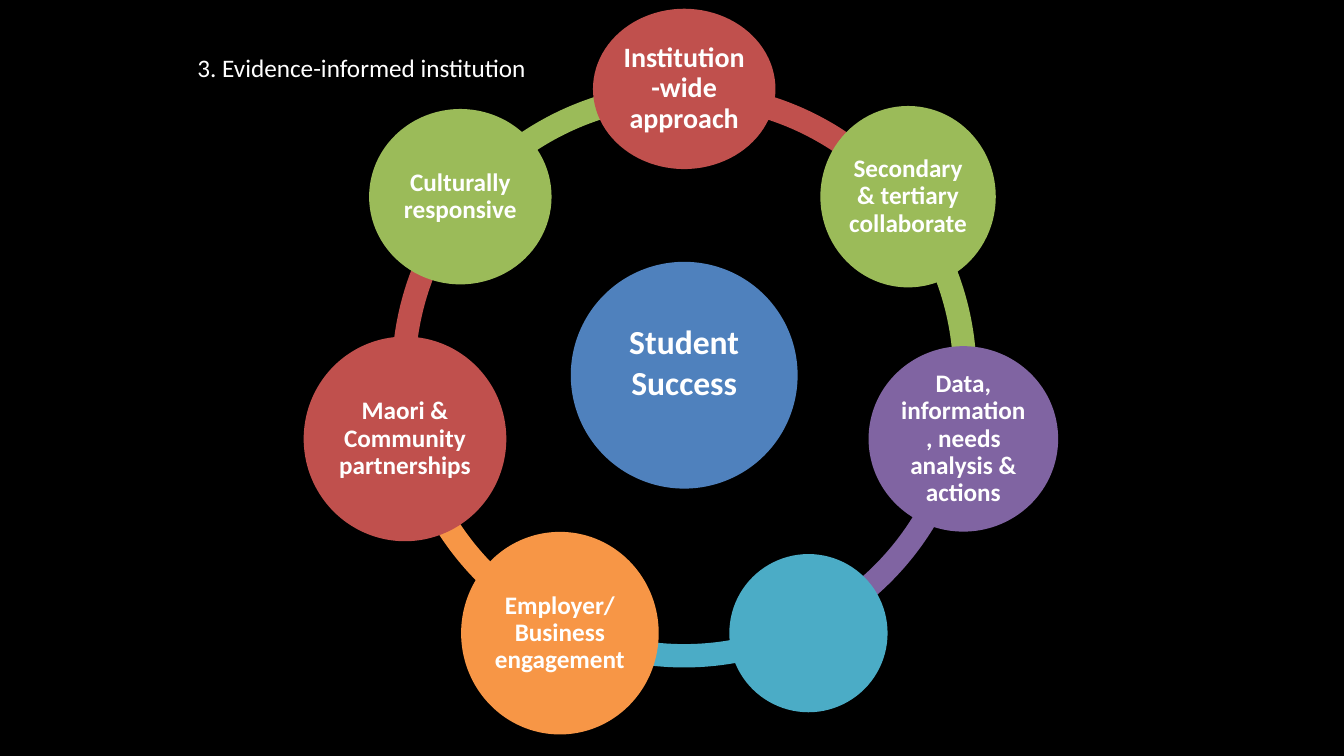
import math

from pptx import Presentation
from pptx import util as u
from pptx.dml.color import RGBColor
from pptx.enum import shapes, text

WIDTH, HEIGHT = u.Inches(13.33), u.Inches(7.5)
COLORS = {
    "black": "000000",
    "white": "FFFFFF",
    "blue": "4F81BD",
    "red": "C0504D",
    "green": "9BBB59",
    "purple": "8064A2",
    "teal": "4BACC6",
    "orange": "F79646",
}
FONT = "Calibri"

# All lengths are percentages of the slide height.
CENTER_X, CENTER_Y = 90.48, 49.63
ORBIT = 37.87
RING_SIZE = 77.33
RING_THICKNESS = 0.04
HUB_SIZE = 30
INSET = 0.4

# label, colour, width, height, font size; clockwise from the top
NODES = [
    ("Institution-wide approach", "red", 24.13, 21.2, 20),
    ("Secondary & tertiary collaborate", "green", 23.2, 24, 18),
    ("Data, information, needs analysis & actions", "purple", 25.07, 24.53, 18),
    ("", "teal", 20.93, 20.93, 18),
    ("Employer/Business engagement", "orange", 26.13, 26.8, 18),
    ("Maori & Community partnerships", "red", 26.8, 27.07, 18),
    ("Culturally responsive", "green", 24.13, 23.2, 18),
]


def pct(share):
    """Length for a percentage of the slide height."""
    return int(HEIGHT * share / 100)


def rgb(name):
    return RGBColor.from_string(COLORS[name])


def add_filled(slide, kind, color, cx, cy, w, h):
    """Borderless preset shape centred on (cx, cy)."""
    sp = slide.shapes.add_shape(
        kind, pct(cx - w / 2), pct(cy - h / 2), pct(w), pct(h))
    sp.shadow.inherit = False
    sp.fill.solid()
    sp.fill.fore_color.rgb = rgb(color)
    sp.line.fill.background()
    return sp


def style_paragraph(p, size, bold=False, align=None, spacing=None):
    p.font.name = FONT
    p.font.size = u.Pt(size)
    p.font.bold = bold
    p.font.color.rgb = rgb("white")
    p.alignment = align
    p.line_spacing = spacing


def add_arc(slide, index, color):
    """Ring segment running clockwise from one node to the next."""
    sp = add_filled(slide, shapes.MSO_SHAPE.BLOCK_ARC, color,
                    CENTER_X, CENTER_Y, RING_SIZE, RING_SIZE)
    # Angle adjustments count 216 to a full turn; 162 is the top.
    step = 216 / len(NODES)
    sp.adjustments[0] = (162 + index * step) % 216
    sp.adjustments[1] = (162 + (index + 1) * step) % 216
    sp.adjustments[2] = RING_THICKNESS


def add_circle(slide, label, color, cx, cy, w, h, size, spacing=0.9, lift=0):
    """Labelled ellipse; lift is extra room kept below the label."""
    sp = add_filled(slide, shapes.MSO_SHAPE.OVAL, color, cx, cy, w, h)
    if not label:
        return
    tf = sp.text_frame
    tf.word_wrap = True
    tf.vertical_anchor = text.MSO_ANCHOR.MIDDLE
    tf.margin_left = tf.margin_right = tf.margin_top = pct(INSET)
    tf.margin_bottom = pct(INSET + lift)
    p = tf.paragraphs[0]
    p.text = label
    style_paragraph(p, size, True, text.PP_ALIGN.CENTER, spacing)


def add_node(slide, index, label, color, w, h, size):
    angle = 2 * math.pi * index / len(NODES)
    add_circle(slide, label, color,
               CENTER_X + ORBIT * math.sin(angle),
               CENTER_Y - ORBIT * math.cos(angle), w, h, size)


def add_caption(slide, caption, x, y, w, h):
    tf = slide.shapes.add_textbox(pct(x), pct(y), pct(w), pct(h)).text_frame
    tf.word_wrap = True
    p = tf.paragraphs[0]
    p.text = caption
    style_paragraph(p, 18)


def main():
    prs = Presentation()
    prs.slide_width, prs.slide_height = WIDTH, HEIGHT
    slide = prs.slides.add_slide(prs.slide_layouts[6])
    slide.background.fill.solid()
    slide.background.fill.fore_color.rgb = rgb("black")

    for index, node in enumerate(NODES):
        add_arc(slide, index, node[1])
    add_circle(slide, "Student Success", "blue", CENTER_X, CENTER_Y,
               HUB_SIZE, HUB_SIZE, 24, spacing=1.0, lift=3.6)
    for index, node in enumerate(NODES):
        add_node(slide, index, *node)
    add_caption(slide, "3. Evidence-informed institution",
                24.8, 6.27, 49.6, 5.33)

    prs.save("out.pptx")


if __name__ == "__main__":
    main()
